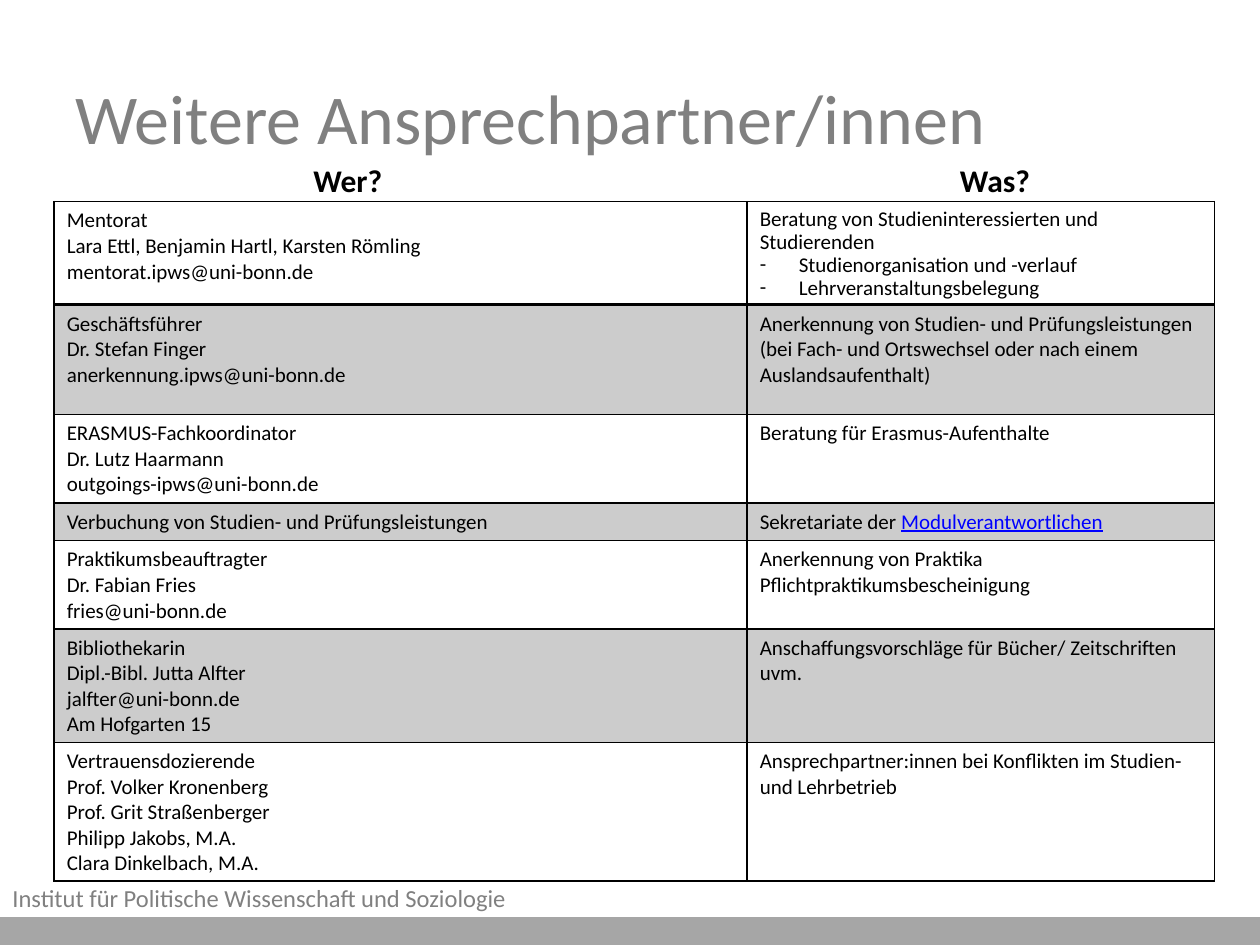
from dataclasses import dataclass

from lxml.etree import SubElement
from pptx import Presentation
from pptx.dml.color import RGBColor
from pptx.enum.shapes import MSO_SHAPE
from pptx.enum.text import MSO_ANCHOR, PP_ALIGN
from pptx.oxml.ns import qn
from pptx.util import Inches, Pt


@dataclass(frozen=True)
class Theme:
    font: str = "Calibri"
    black: str = "000000"
    grey: str = "808080"
    bar: str = "A6A6A6"
    link: str = "0000FF"
    shade: int = 20
    title: int = 40
    head: int = 18
    foot: int = 14
    body: int = 12


THEME = Theme()
LINK = "Modulverantwortlichen"
COLS = [5.5, 3.71]
HEIGHTS = [0.81, 0.87, 0.7, 0.3, 0.7, 0.9, 1.1]
ROWS = [
    (["Mentorat", "Lara Ettl, Benjamin Hartl, Karsten Römling",
      "mentorat.ipws@uni-bonn.de"],
     ["Beratung von Studieninteressierten und Studierenden",
      "- Studienorganisation und -verlauf",
      "- Lehrveranstaltungsbelegung"]),
    (["Geschäftsführer", "Dr. Stefan Finger", "anerkennung.ipws@uni-bonn.de"],
     ["Anerkennung von Studien- und Prüfungsleistungen (bei Fach- und "
      "Ortswechsel oder nach einem Auslandsaufenthalt)"]),
    (["ERASMUS-Fachkoordinator", "Dr. Lutz Haarmann",
      "outgoings-ipws@uni-bonn.de"],
     ["Beratung für Erasmus-Aufenthalte"]),
    (["Verbuchung von Studien- und Prüfungsleistungen"],
     ["Sekretariate der " + LINK]),
    (["Praktikumsbeauftragter", "Dr. Fabian Fries", "fries@uni-bonn.de"],
     ["Anerkennung von Praktika", "Pflichtpraktikumsbescheinigung"]),
    (["Bibliothekarin", "Dipl.-Bibl. Jutta Alfter", "jalfter@uni-bonn.de",
      "Am Hofgarten 15"],
     ["Anschaffungsvorschläge für Bücher/ Zeitschriften uvm."]),
    (["Vertrauensdozierende", "Prof. Volker Kronenberg",
      "Prof. Grit Straßenberger", "Philipp Jakobs, M.A.\nClara Dinkelbach, M.A."],
     ["Ansprechpartner:innen bei Konflikten im Studien- und Lehrbetrieb"]),
]


def style(para, size, color, bold=False):
    for run in para.runs:
        run.font.name = THEME.font
        run.font.size = Pt(size)
        run.font.bold = bold
        run.font.color.rgb = RGBColor.from_string(color)


def add_text(slide, box, text, size, color, bold=False, align=PP_ALIGN.LEFT,
             anchor=MSO_ANCHOR.TOP):
    frame = slide.shapes.add_textbox(*map(Inches, box)).text_frame
    frame.word_wrap = True
    frame.vertical_anchor = anchor
    frame.text = text
    para = frame.paragraphs[0]
    para.alignment = align
    style(para, size, color, bold)


def add_bar(slide):
    bar = slide.shapes.add_shape(MSO_SHAPE.RECTANGLE, Inches(0), Inches(7.29),
                                 Inches(10), Inches(0.21))
    bar.shadow.inherit = False
    color = RGBColor.from_string(THEME.bar)
    bar.fill.solid()
    bar.fill.fore_color.rgb = color
    bar.line.color.rgb = color
    bar.line.width = Pt(2)


def add_edge(cell, side, width):
    edge = SubElement(cell._tc.get_or_add_tcPr(), qn("a:ln" + side),
                      w=str(Pt(width)))
    fill = SubElement(edge, qn("a:solidFill"))
    SubElement(fill, qn("a:srgbClr"), val=THEME.black)


def fill_cell(cell, shaded):
    if not shaded:
        cell.fill.background()
        return
    cell.fill.solid()
    cell.fill.fore_color.rgb = RGBColor.from_string(THEME.black)
    fill = cell._tc.tcPr.find(qn("a:solidFill"))
    color = fill.find(qn("a:srgbClr"))
    SubElement(color, qn("a:alpha"), val=str(THEME.shade * 1000))


def add_dash(para):
    props = para._p.get_or_add_pPr()
    props.set("marL", str(Inches(0.31)))
    props.set("indent", str(-Inches(0.31)))
    SubElement(props, qn("a:buFont"), typeface=THEME.font)
    SubElement(props, qn("a:buChar"), char="-")


def write_cell(cell, lines):
    frame = cell.text_frame
    tight = any(line.startswith("- ") for line in lines)
    for i, line in enumerate(lines):
        para = frame.paragraphs[0] if i == 0 else frame.add_paragraph()
        if line.startswith("- "):
            add_dash(para)
        if tight:
            para.line_spacing = 0.9
        para.text = line.removeprefix("- ").removesuffix(LINK)
        style(para, THEME.body, THEME.black)
        if line.endswith(LINK):
            run = para.add_run()
            run.text = LINK
            run.font.name = THEME.font
            run.font.size = Pt(THEME.body)
            run.font.underline = True
            run.font.color.rgb = RGBColor.from_string(THEME.link)


def add_grid(slide):
    table = slide.shapes.add_table(
        len(ROWS), len(COLS), Inches(0.43), Inches(1.6),
        Inches(sum(COLS)), Inches(sum(HEIGHTS))).table
    table.first_row = False
    table.horz_banding = False
    for col, width in zip(table.columns, COLS):
        col.width = Inches(width)
    for r, (height, texts) in enumerate(zip(HEIGHTS, ROWS)):
        table.rows[r].height = Inches(height)
        for c, lines in enumerate(texts):
            cell = table.cell(r, c)
            for side in "LRTB":
                thick = (r, side) in ((0, "B"), (1, "T"))
                add_edge(cell, side, 2 if thick else 1)
            fill_cell(cell, r % 2 == 1)
            write_cell(cell, lines)


def main():
    deck = Presentation()
    deck.slide_width = Inches(10)
    deck.slide_height = Inches(7.5)
    slide = deck.slides.add_slide(deck.slide_layouts[6])
    add_bar(slide)
    add_text(slide, (0, 6.96, 7.09, 0.34),
             "Institut für Politische Wissenschaft und Soziologie",
             THEME.foot, THEME.grey)
    add_grid(slide)
    add_text(slide, (0.5, 0.3, 9, 1.25), "Weitere Ansprechpartner/innen",
             THEME.title, THEME.grey, anchor=MSO_ANCHOR.MIDDLE)
    add_text(slide, (2.17, 1.23, 1.18, 0.4), "Wer?", THEME.head, THEME.black,
             bold=True, align=PP_ALIGN.CENTER)
    add_text(slide, (7.52, 1.23, 0.79, 0.4), "Was?", THEME.head, THEME.black,
             bold=True)
    deck.save("out.pptx")


if __name__ == "__main__":
    main()
